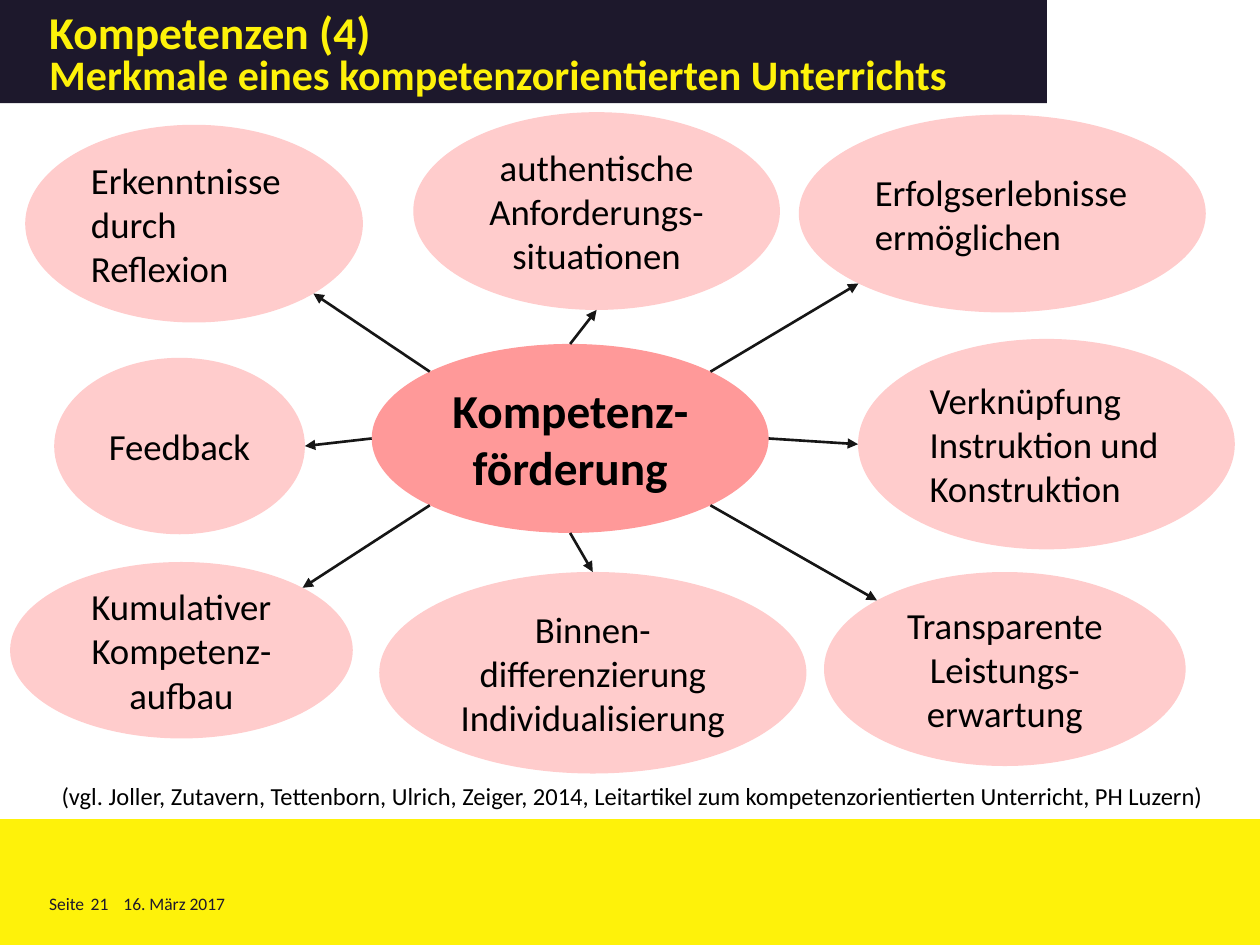
from dataclasses import dataclass
from math import hypot
from lxml.etree import SubElement as Sub
from pptx import Presentation as Deck
from pptx.dml.color import RGBColor as RGB
from pptx.enum.shapes import MSO_CONNECTOR as Line, MSO_SHAPE as Form
from pptx.enum.text import MSO_ANCHOR as Anchor, PP_ALIGN as Align
from pptx.oxml.ns import qn
from pptx.util import Inches, Pt

WIDE, HIGH = Inches(10), Inches(7.5)
CORE = (29.5, 36.4, 31.5, 20)
NODES = [
    ("Erkenntnisse durch Reflexion", (2, 13.2, 26.8, 20.93), (-1, -1), Align.LEFT),
    ("authentische Anforderungs-situationen", (32.8, 11.87, 29.1, 20.93), (0, -1), Align.CENTER),
    ("Erfolgserlebnisse ermöglichen", (63.4, 12.13, 32.3, 20.93), (1, -1), Align.LEFT),
    ("Feedback", (4.3, 37.87, 19.9, 18.67), (-1, 0), Align.CENTER),
    ("Verknüpfung Instruktion und Konstruktion", (68.1, 35.87, 29.9, 22.27), (1, 0), Align.LEFT),
    ("Kumulativer Kompetenz-aufbau", (0.8, 59.47, 27.2, 18.67), (-1, 1), Align.CENTER),
    ("Binnen-differenzierung Individualisierung", (30.1, 60.53, 33.9, 21.33), (0, 1), Align.CENTER),
    ("Transparente Leistungs-erwartung", (65.4, 60.53, 28.7, 20.53), (1, 1), Align.CENTER),
]
FOOT = [("Seite", 3.9, 3.5), ("21", 7.2, 3), ("16. März 2017", 9.8, 22.8)]


@dataclass(frozen=True)
class Theme:
    """Colours, font and type sizes of the slide."""
    font: str = "Calibri"
    dark: str = "1D182C"
    gold: str = "FEF20A"
    core: str = "FF9999"
    node: str = "FFCCCC"
    ink: str = "000000"
    line: str = "161616"
    head: int = 26
    sub: int = 24
    hub: int = 27
    body: int = 21
    cite: int = 14
    foot: int = 10


LOOK = Theme()


def span(box):
    """Turn percent shares of the slide into lengths."""
    return [round(part * side / 100) for part, side in zip(box, (WIDE, HIGH) * 2)]


def write(shape, text, size, tint, bold=False, align=Align.LEFT,
          pads=(0.13, 0.07, 0.13, 0.07), anchor=Anchor.MIDDLE):
    """Fill a shape with styled text and return its paragraph."""
    frame = shape.text_frame
    frame.text = text
    frame.word_wrap = True
    frame.vertical_anchor = anchor
    (frame.margin_left, frame.margin_top,
     frame.margin_right, frame.margin_bottom) = map(Inches, pads)
    para = frame.paragraphs[0]
    para.alignment = align
    for run in para.runs:
        font = run.font
        font.name, font.size, font.bold = LOOK.font, Pt(size), bold
        font.color.rgb = RGB.from_string(tint)
    return para


def block(slide, form, box, tint):
    """Add a flat shape without outline."""
    shape = slide.shapes.add_shape(form, *span(box))
    shape.shadow.inherit = False
    shape.fill.solid()
    shape.fill.fore_color.rgb = RGB.from_string(tint)
    shape.line.fill.background()
    return shape


def label(slide, text, box, size, tint, pads):
    """Add a plain line of text."""
    write(slide.shapes.add_textbox(*span(box)), text, size, tint,
          pads=pads, anchor=Anchor.TOP)


def rim(box, way):
    """Find the point of an ellipse that lies in one of eight directions."""
    left, top, wide, high = box
    size = hypot(*way)
    return (left + wide / 2 * (1 + way[0] / size),
            top + high / 2 * (1 + way[1] / size))


def arrow(slide, box, way):
    """Link the core to the facing side of a node."""
    back = (-way[0], -way[1])
    ends = span(rim(CORE, way) + rim(box, back))
    link = slide.shapes.add_connector(Line.STRAIGHT, *ends)
    link.line.width = Pt(1.5)
    link.line.color.rgb = RGB.from_string(LOOK.line)
    Sub(link.line._get_or_add_ln(), qn("a:tailEnd"), type="triangle")
    Sub(link._element.spPr, qn("a:effectLst"))


def title(slide):
    """Add the two-line title bar."""
    bar = block(slide, Form.RECTANGLE, (0, 0, 83.1, 10.93), LOOK.dark)
    para = write(bar, "Kompetenzen (4)\vMerkmale eines kompetenzorientierten Unterrichts",
                 LOOK.head, LOOK.gold, bold=True,
                 pads=(0.39, 0.08, 0.08, 0.04), anchor=Anchor.BOTTOM)
    para.line_spacing = 0.8
    para.runs[1].font.size = Pt(LOOK.sub)


def footer(slide):
    """Add the yellow band with page and date."""
    block(slide, Form.RECTANGLE, (0, 86.67, 100, 13.33), LOOK.gold)
    for text, left, wide in FOOT:
        label(slide, text, (left, 94.53, wide, 2.27), LOOK.foot, LOOK.dark, (0, 0, 0, 0))


def main():
    """Build and save the slide."""
    deck = Deck()
    deck.slide_width, deck.slide_height = WIDE, HIGH
    slide = deck.slides.add_slide(deck.slide_layouts[6])
    footer(slide)
    hub = block(slide, Form.OVAL, CORE, LOOK.core)
    write(hub, "Kompetenz-förderung", LOOK.hub, LOOK.ink, bold=True, align=Align.CENTER)
    for text, box, way, align in NODES:
        node = block(slide, Form.OVAL, box, LOOK.node)
        write(node, text, LOOK.body, LOOK.ink, align=align)
        arrow(slide, box, way)
    label(slide, "(vgl. Joller, Zutavern, Tettenborn, Ulrich, Zeiger, 2014, "
          "Leitartikel zum kompetenzorientierten Unterricht, PH Luzern)",
          (3.9, 82, 96.3, 4.53), LOOK.cite, LOOK.ink, (0.1, 0.05, 0.1, 0.05))
    title(slide)
    deck.save("out.pptx")


if __name__ == "__main__":
    main()
